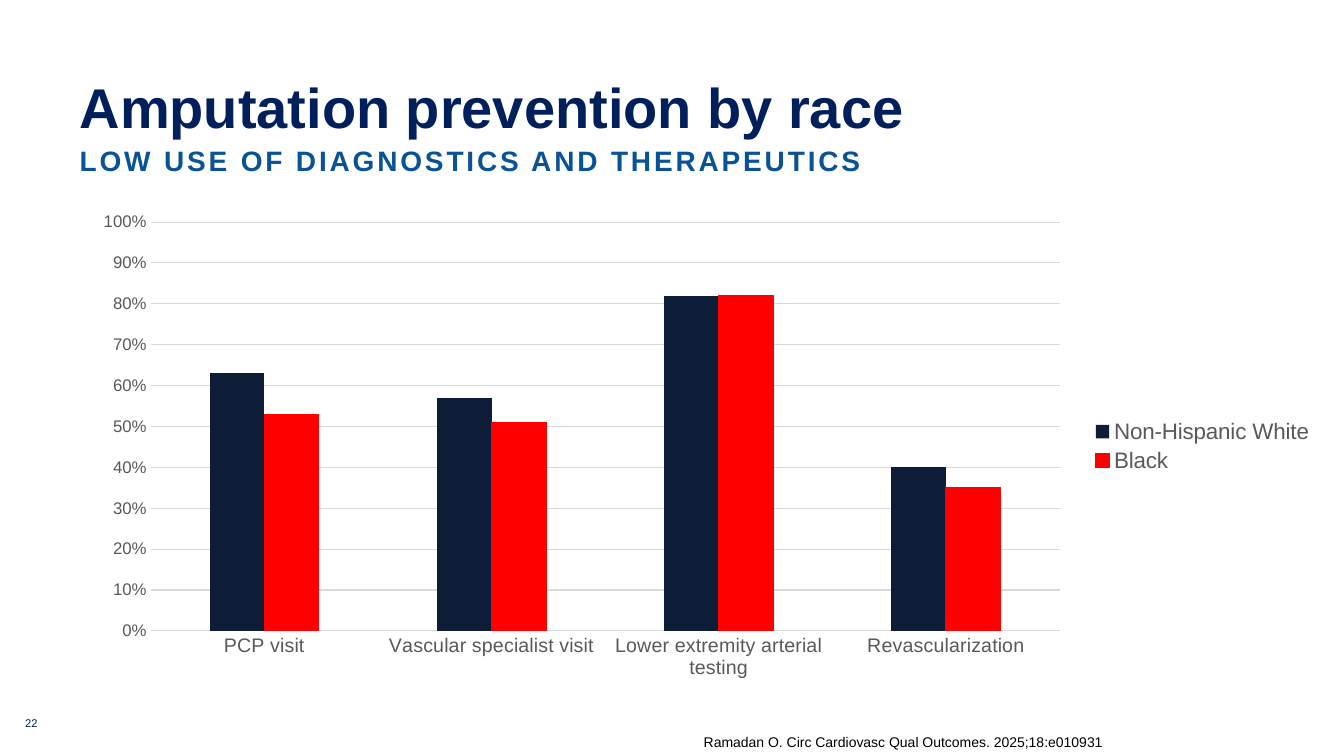
from lxml import etree
from pptx import Presentation
from pptx.chart.data import CategoryChartData
from pptx.dml.color import RGBColor
from pptx.enum import chart as ch, text
from pptx.oxml import parse_xml
from pptx.oxml.ns import nsdecls, qn
from pptx.util import Inches, Pt

# Content
TITLE = "Amputation prevention by race"
SUBTITLE = "LOW USE OF DIAGNOSTICS AND THERAPEUTICS"
PAGE = "22"
CITATION = "Ramadan O. Circ Cardiovasc Qual Outcomes. 2025;18:e010931"
CATEGORIES = ["PCP visit", "Vascular specialist visit",
              "Lower extremity arterial testing", "Revascularization"]
SERIES = [
    ("Non-Hispanic White", [0.63, 0.57, 0.82, 0.4], "0D1D37"),
    ("Black", [0.53, 0.51, 0.82, 0.35], "FF0000"),
]
PLOT_LAYOUT = {"x": 0.057, "y": 0.04, "w": 0.73, "h": 0.84}
FONT = "Arial"
NAVY, BLUE, BLACK = "011F5B", "085296", "000000"
GREY, GRID = "595959", "D9D9D9"
LEFT, WIDTH = 0.79, 11.76


def rgb(value):
    return RGBColor.from_string(value)


def style(font, size, color, bold=False):
    font.name, font.size, font.bold = FONT, Pt(size), bold
    font.color.rgb = rgb(color)


def write(sp, box, words, size, color, bold=False, anchor="BOTTOM"):
    sp.left, sp.top, sp.width, sp.height = map(Inches, box)
    tf = sp.text_frame
    tf.margin_left = tf.margin_top = tf.margin_right = tf.margin_bottom = 0
    tf.word_wrap = True
    tf.auto_size = text.MSO_AUTO_SIZE.NONE
    tf.vertical_anchor = text.MSO_ANCHOR[anchor]
    p = tf.paragraphs[0]
    p.alignment = text.PP_ALIGN.LEFT
    p.space_before = Pt(0)
    r = p.add_run()
    r.text = words
    style(r.font, size, color, bold)
    return p


prs = Presentation()
prs.slide_width, prs.slide_height = Inches(13.33), Inches(7.5)
s = prs.slides.add_slide(prs.slide_layouts[1])

# Title and subtitle
p = write(s.shapes.title, (LEFT, 0.79, WIDTH, 0.61), TITLE, 40, NAVY, True)
p.line_spacing = 0.9
p = write(s.placeholders[1], (LEFT, 1.4, WIDTH, 0.38), SUBTITLE, 20, BLUE,
          True, "MIDDLE")
p.space_after = Pt(3)
pPr = p._p.get_or_add_pPr()
pPr.set("marL", "0")
pPr.set("indent", "0")
etree.SubElement(pPr, qn("a:buNone"))
p.runs[0].font._element.set("spc", "200")

# Chart
data = CategoryChartData(number_format="0%")
data.categories = CATEGORIES
for name, values, _ in SERIES:
    data.add_series(name, values)
chart = s.shapes.add_chart(
    ch.XL_CHART_TYPE.COLUMN_CLUSTERED, Inches(LEFT), Inches(2.01),
    Inches(12.35), Inches(4.83), data).chart
style(chart.font, 10, BLACK)
chart.has_title = False
chart.has_legend = True
chart.legend.position = ch.XL_LEGEND_POSITION.RIGHT
chart.legend.include_in_layout = False
style(chart.legend.font, 16, GREY)

plot = chart.plots[0]
plot.gap_width, plot.overlap = 216, 0
plot.vary_by_categories = False
for series, (_, _, color) in zip(plot.series, SERIES):
    series.format.fill.solid()
    series.format.fill.fore_color.rgb = rgb(color)
    series.invert_if_negative = False
red_line = plot.series[1].format.line
red_line.color.rgb, red_line.width = rgb(SERIES[1][2]), Pt(0.75)

# Axes
cat, val = chart.category_axis, chart.value_axis
for axis, size in ((cat, 14), (val, 12)):
    axis.major_tick_mark = axis.minor_tick_mark = ch.XL_TICK_MARK.NONE
    style(axis.tick_labels.font, size, GREY)
val.minimum_scale, val.maximum_scale, val.major_unit = 0, 1, 0.1
val.tick_labels.number_format = "0%"
val.tick_labels.number_format_is_linked = False
val.format.line.fill.background()
val.has_major_gridlines = True
for line in (cat.format.line, val.major_gridlines.format.line):
    line.color.rgb, line.width = rgb(GRID), Pt(0.75)

# Inner plot area, as fractions of the chart
area = chart._chartSpace.chart.plotArea
for old in area.findall(qn("c:layout")):
    area.remove(old)
sizes = "".join(f'<c:{k} val="{v}"/>' for k, v in PLOT_LAYOUT.items())
area.insert(0, parse_xml(
    f'<c:layout {nsdecls("c")}><c:manualLayout><c:layoutTarget val="inner"/>'
    f'<c:xMode val="edge"/><c:yMode val="edge"/>{sizes}'
    '</c:manualLayout></c:layout>'))

# Page number and citation
for box, words, size, color in (
        ((0.25, 7.04, 0.29, 0.2), PAGE, 8, NAVY),
        ((6.98, 7.27, 4.07, 0.17), CITATION, 10, BLACK)):
    write(s.shapes.add_textbox(0, 0, 0, 0), box, words, size, color)

prs.save("out.pptx")
